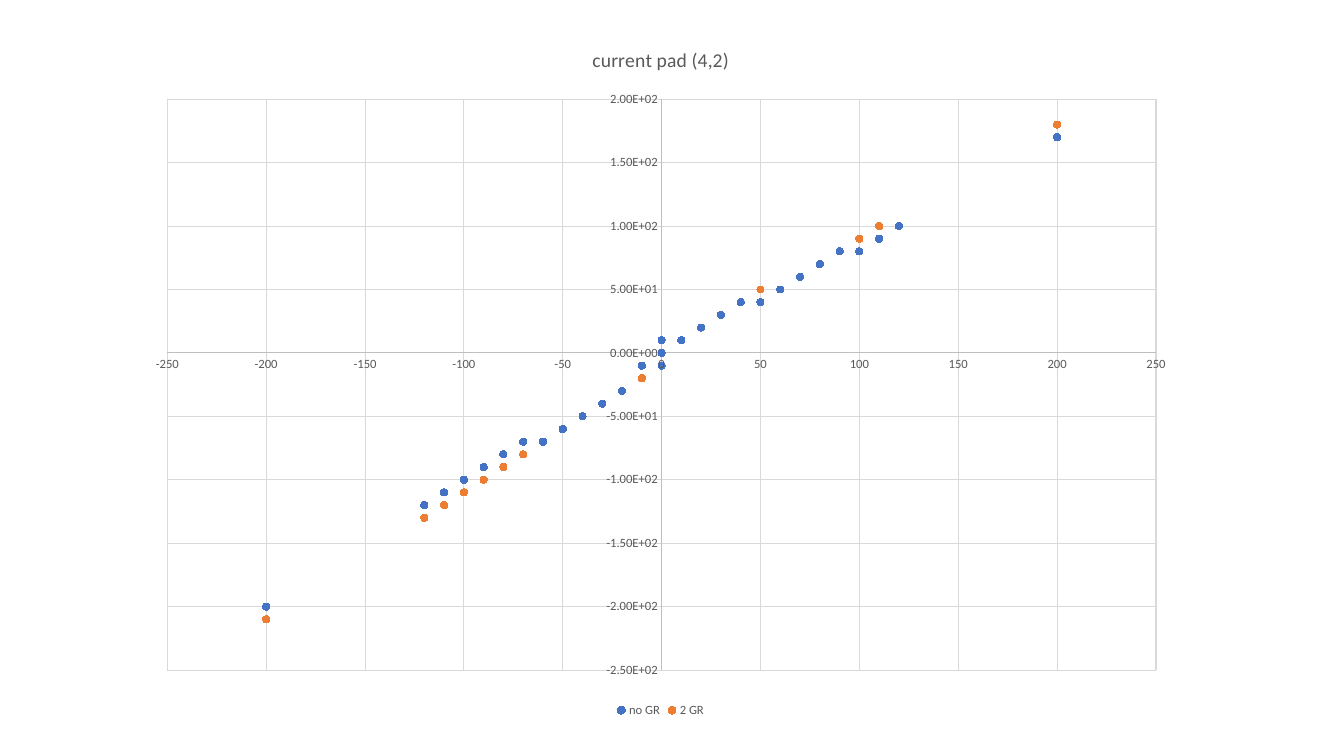
from dataclasses import dataclass

from lxml.etree import SubElement
from pptx import Presentation
from pptx.chart.data import XyChartData
from pptx.dml.color import RGBColor
from pptx.enum.chart import XL_CHART_TYPE as ChartType
from pptx.enum.chart import XL_LEGEND_POSITION as LegendPos
from pptx.enum.chart import XL_MARKER_STYLE as MarkerStyle
from pptx.enum.chart import XL_TICK_MARK as TickMark
from pptx.oxml.ns import qn
from pptx.util import Pt

COLORS = {
    "text": "595959",
    "axis": "BFBFBF",
    "grid": "D9D9D9",
    "blue": "4472C4",
    "orange": "ED7D31",
}
FONT = "Calibri"


@dataclass
class Readings:
    name: str
    color: str
    currents: list[int]


@dataclass
class Scale:
    low: int
    high: int
    step: int
    number_format: str


@dataclass
class Box:
    left: float
    top: float
    width: float
    height: float


# Sweep rounded to tens, with repeated readings around zero
VOLTAGES = [-200, *range(-120, -10, 10), *[-10] * 3, *[0] * 5, *[10] * 3,
            *range(20, 121, 10), 200]

READINGS = [
    Readings("no GR", "blue", [
        -200, -120, -110, -100, -90, -80, -70, -70, -60, -50, -40, -30,
        -10, -10, -10, -10, 0, 0, 0, 10, 10, 10, 10,
        20, 30, 40, 40, 50, 60, 70, 80, 80, 90, 100, 170]),
    Readings("2 GR", "orange", [
        -210, -130, -120, -110, -100, -90, -80, -70, -60, -50, -40, -30,
        -20, -10, -10, -10, 0, 0, 0, 10, 10, 10, 10,
        20, 30, 40, 50, 50, 60, 70, 80, 90, 100, 100, 180]),
]
X_SCALE = Scale(-250, 250, 50, "General")
Y_SCALE = Scale(-250, 200, 50, "0.00E+00")
FRAME = Box(96.5, 16.5, 751, 499)
PLOT = Box(119.5, 70.9, 706.3, 407.8)


def rgb(name: str) -> RGBColor:
    return RGBColor.from_string(COLORS[name])


def style_font(font, size: float = 9, color: str = "text") -> None:
    font.name = FONT
    font.size = Pt(size)
    font.bold = False
    font.color.rgb = rgb(color)


def set_title(chart, text: str, *, size: float, color: str = "text") -> None:
    chart.has_title = True
    tf = chart.chart_title.text_frame
    r = tf.paragraphs[0].add_run()
    r.text = text
    style_font(r.font, size, color)
    chart.chart_title.include_in_layout = False


def style_line(line, color: str) -> None:
    line.color.rgb = rgb(color)
    line.width = Pt(0.75)


def style_axis(axis, scale: Scale) -> None:
    axis.minimum_scale, axis.maximum_scale = scale.low, scale.high
    axis.major_unit = scale.step
    axis.has_major_gridlines = True
    axis.major_tick_mark = axis.minor_tick_mark = TickMark.NONE
    axis.tick_labels.number_format = scale.number_format
    axis.tick_labels.number_format_is_linked = False
    style_font(axis.tick_labels.font)
    style_line(axis.format.line, "axis")
    style_line(axis.major_gridlines.format.line, "grid")


def style_series(series, color: str) -> None:
    series.format.line.fill.background()
    marker = series.marker
    marker.style = MarkerStyle.CIRCLE
    marker.size = 5
    marker.format.fill.solid()
    marker.format.fill.fore_color.rgb = rgb(color)
    style_line(marker.format.line, color)


def place_plot(chart, frame: Box, plot: Box) -> None:
    plot_area = chart.plots[0]._element.getparent()
    layout = plot_area.find(qn("c:layout"))
    if layout is None:
        layout = SubElement(plot_area, qn("c:layout"))
        plot_area.insert(0, layout)
    manual = SubElement(layout, qn("c:manualLayout"))
    settings = {
        "layoutTarget": "inner", "xMode": "edge", "yMode": "edge",
        "x": (plot.left - frame.left) / frame.width,
        "y": (plot.top - frame.top) / frame.height,
        "w": plot.width / frame.width,
        "h": plot.height / frame.height,
    }
    for tag, value in settings.items():
        SubElement(manual, qn(f"c:{tag}")).set("val", str(value))


def add_scatter(s) -> None:
    data = XyChartData()
    for readings in READINGS:
        series = data.add_series(readings.name)
        for voltage, current in zip(VOLTAGES, readings.currents):
            series.add_data_point(voltage, current)
    sp = s.shapes.add_chart(ChartType.XY_SCATTER, Pt(FRAME.left), Pt(FRAME.top),
                            Pt(FRAME.width), Pt(FRAME.height), data)
    chart = sp.chart
    chart.font.name = FONT
    chart.font.size = Pt(10)

    # Title and legend
    set_title(chart, "current pad (4,2)", size=14)
    chart.has_legend = True
    chart.legend.position = LegendPos.BOTTOM
    chart.legend.include_in_layout = False
    style_font(chart.legend.font)

    # Axes and points
    style_axis(chart.category_axis, X_SCALE)
    style_axis(chart.value_axis, Y_SCALE)
    chart.plots[0].vary_by_categories = False
    for series, readings in zip(chart.plots[0].series, READINGS):
        series.smooth = False
        style_series(series, readings.color)
    place_plot(chart, FRAME, PLOT)


def main() -> None:
    prs = Presentation()
    prs.slide_width, prs.slide_height = Pt(960), Pt(540)
    s = prs.slides.add_slide(prs.slide_layouts[6])
    add_scatter(s)
    prs.save("out.pptx")


if __name__ == "__main__":
    main()
